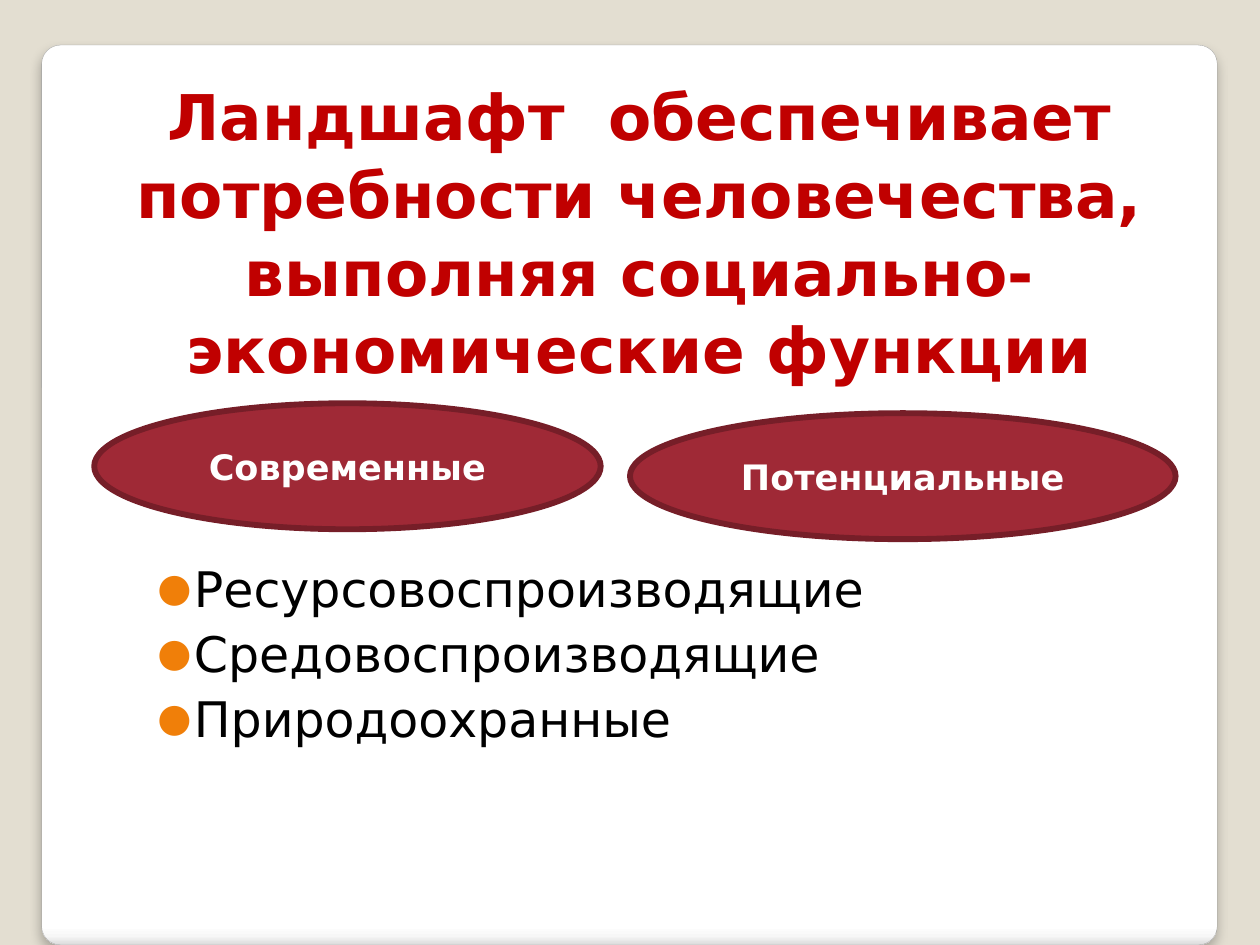
from lxml import etree
from pptx import Presentation
from pptx.dml.color import RGBColor
from pptx.enum.shapes import MSO_SHAPE
from pptx.enum.text import MSO_ANCHOR, MSO_AUTO_SIZE, PP_ALIGN
from pptx.oxml import parse_xml
from pptx.oxml.ns import nsdecls, qn
from pptx.util import Cm, Pt

ROUND, OVAL = MSO_SHAPE.ROUNDED_RECTANGLE, MSO_SHAPE.OVAL
CENTER, LEFT = PP_ALIGN.CENTER, PP_ALIGN.LEFT
MIDDLE, BOTTOM, TOP = MSO_ANCHOR.MIDDLE, MSO_ANCHOR.BOTTOM, MSO_ANCHOR.TOP
FONT = "DejaVu Sans"
COLORS = {
    "background": "E3DED1", "card_line": "A4A4A4", "title": "C00000",
    "oval": "9F2936", "oval_line": "761E28", "oval_text": "FFFFFF",
    "text": "000000", "bullet": "F07F09",
}
CARD_STOPS = [(0, "FFFFFF"), (98, "FFFFFF"), (99, "F7F7F7"), (100, "DADADA")]
TITLE = ("Ландшафт  обеспечивает потребности человечества, "
         "выполняя социально-экономические функции")
FUNCTIONS = ["Ресурсовоспроизводящие", "Средовоспроизводящие", "Природоохранные"]


def rgb(name):
    return RGBColor.from_string(COLORS[name])


def place(sp, left, top, width, height):
    sp.left, sp.top, sp.width, sp.height = map(Cm, (left, top, width, height))


def format_text(p, text, size, color, bold=False, align=LEFT, spacing=1.0):
    p.alignment = align
    p.line_spacing = spacing
    r = p.add_run()
    r.text = text
    r.font.name = FONT
    r.font.size = Pt(size)
    r.font.bold = bold
    r.font.color.rgb = rgb(color)


def add_bullet(p):
    pPr = p._p.get_or_add_pPr()
    pPr.set("marL", str(Cm(0.74)))
    pPr.set("indent", str(-Cm(0.74)))
    color = etree.SubElement(pPr, qn("a:buClr"))
    etree.SubElement(color, qn("a:srgbClr"), val=COLORS["bullet"])
    etree.SubElement(pPr, qn("a:buSzPct"), val="80000")
    etree.SubElement(pPr, qn("a:buFont"), typeface=FONT)
    etree.SubElement(pPr, qn("a:buChar"), char="●")


def add_card(s):
    """Put the rounded panel with gradient and soft shadow behind everything."""
    sp = s.shapes.add_shape(ROUND, Cm(0.84), Cm(0.91), Cm(23.7), Cm(18.14))
    sp.adjustments[0] = 0.021
    sp.line.color.rgb = rgb("card_line")
    sp.line.width = Pt(0.16)
    stops = "".join(f'<a:gs pos="{pos * 1000}"><a:srgbClr val="{color}"/></a:gs>'
                    for pos, color in CARD_STOPS)
    gradient = parse_xml(f'<a:gradFill {nsdecls("a")}><a:gsLst>{stops}</a:gsLst>'
                         '<a:lin ang="5400000" scaled="0"/></a:gradFill>')
    shadow = parse_xml(
        f'<a:effectLst {nsdecls("a")}><a:outerShdw blurRad="{Pt(6)}" dist="{Pt(4)}" '
        'dir="5400000" rotWithShape="0"><a:srgbClr val="000000">'
        '<a:alpha val="25000"/></a:srgbClr></a:outerShdw></a:effectLst>')
    spPr = sp._element.spPr
    spPr.find(qn("a:prstGeom")).addnext(gradient)
    spPr.append(shadow)
    s.shapes._spTree.insert(2, sp._element)


def fill_title(sp):
    place(sp, 1.09, 1.32, 23.6, 6.6)
    tf = sp.text_frame
    tf.auto_size = MSO_AUTO_SIZE.NONE
    tf.vertical_anchor = BOTTOM
    format_text(tf.paragraphs[0], TITLE, 36, "title", bold=True, align=CENTER,
                spacing=1.03)


def fill_list(sp):
    place(sp, 2.67, 10.97, 22.73, 6.99)
    tf = sp.text_frame
    tf.auto_size = MSO_AUTO_SIZE.NONE
    tf.vertical_anchor = TOP
    tf.margin_left, tf.margin_top = Cm(0.5), Cm(0.25)
    for i, text in enumerate(FUNCTIONS):
        p = tf.add_paragraph() if i else tf.paragraphs[0]
        add_bullet(p)
        p.space_before = Pt(2.5 if i else 0)
        format_text(p, text, 28, "text", spacing=1.03)


def add_oval(s, text, left, top, width):
    sp = s.shapes.add_shape(OVAL, Cm(left), Cm(top), Cm(width), Cm(2.54))
    sp.shadow.inherit = False
    sp.fill.solid()
    sp.fill.fore_color.rgb = rgb("oval")
    sp.line.color.rgb = rgb("oval_line")
    sp.line.width = Pt(3.35)
    tf = sp.text_frame
    tf.vertical_anchor = MIDDLE
    format_text(tf.paragraphs[0], text, 20, "oval_text", bold=True, align=CENTER)


def main():
    prs = Presentation()
    prs.slide_width, prs.slide_height = Cm(25.4), Cm(19.05)
    s = prs.slides.add_slide(prs.slide_layouts[1])
    s.background.fill.solid()
    s.background.fill.fore_color.rgb = rgb("background")
    add_card(s)
    fill_title(s.shapes.title)
    fill_list(s.placeholders[1])
    add_oval(s, "Современные", 1.9, 8.13, 10.21)
    add_oval(s, "Потенциальные", 12.7, 8.33, 11)
    prs.save("out.pptx")


if __name__ == "__main__":
    main()
